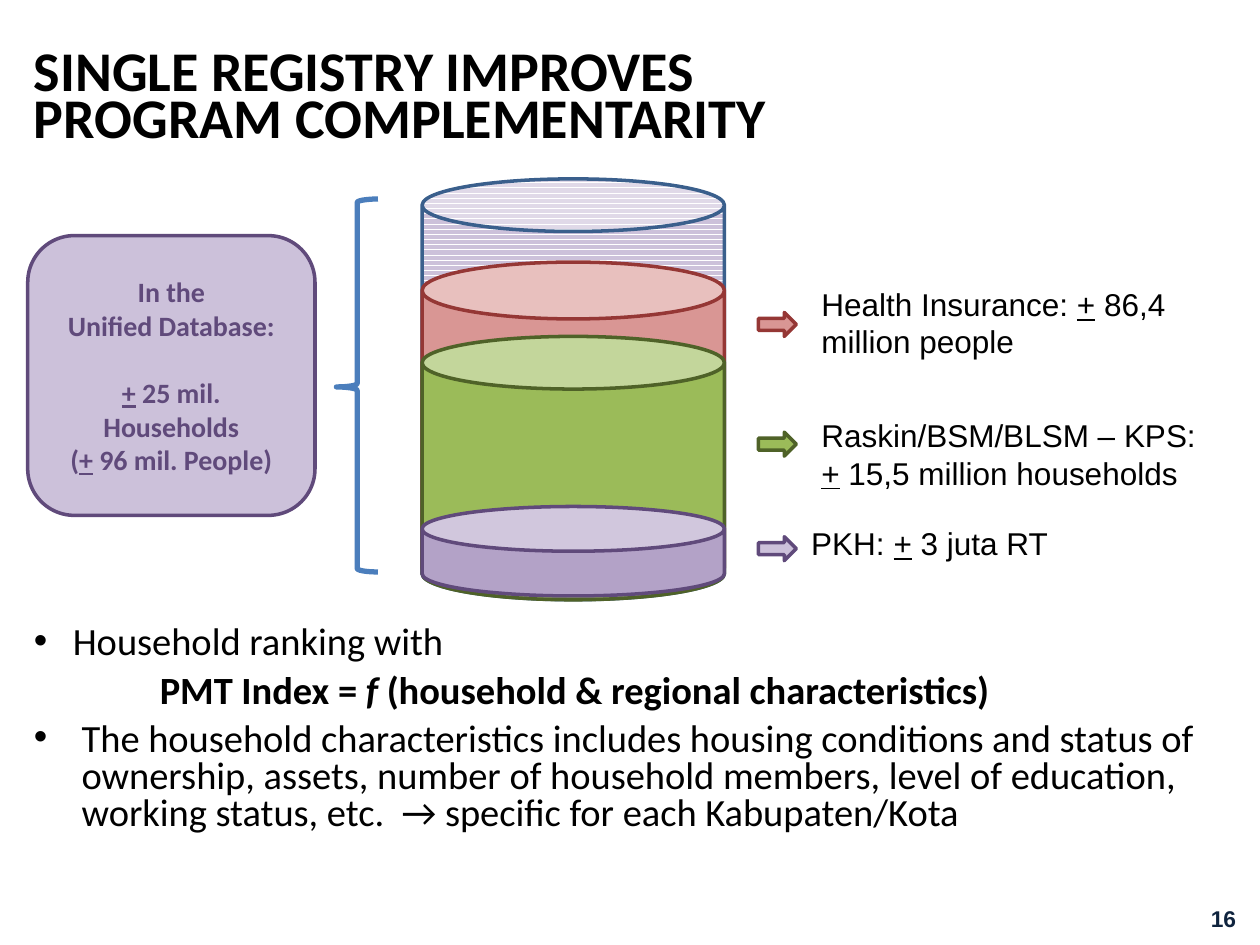
from lxml import etree
from pptx import Presentation
from pptx.dml.color import RGBColor
from pptx.enum.dml import MSO_PATTERN
from pptx.enum.shapes import MSO_SHAPE as SHAPE
from pptx.enum.text import MSO_ANCHOR as ANCHOR, PP_ALIGN as ALIGN
from pptx.oxml.ns import qn
from pptx.util import Inches, Pt

BLACK = RGBColor(0x00, 0x00, 0x00)
WHITE = RGBColor(0xFF, 0xFF, 0xFF)
NAVY = RGBColor(0x0F, 0x24, 0x3E)
STEEL = RGBColor(0x3A, 0x5F, 0x8C)
BLUE = RGBColor(0x4B, 0x7E, 0xBC)
ROSE = RGBColor(0xD9, 0x96, 0x94)
DARK_RED = RGBColor(0x95, 0x37, 0x35)
GREEN = RGBColor(0x9B, 0xBB, 0x59)
DARK_GREEN = RGBColor(0x4F, 0x62, 0x28)
LILAC = RGBColor(0xCC, 0xC1, 0xDA)
VIOLET = RGBColor(0xB3, 0xA2, 0xC7)
PURPLE = RGBColor(0x60, 0x4A, 0x7B)


def add_text(para, text, font="Calibri", size=16, color=BLACK, bold=False,
             italic=False, underline=False):
    span = para.add_run()
    span.text = text
    span.font.name = font
    span.font.size = Pt(size)
    span.font.color.rgb = color
    span.font.bold = bold
    span.font.italic = italic
    span.font.underline = underline


def draw_shape(kind, left, top, width, height, fill=None, line=None, weight=2):
    shape = page.shapes.add_shape(kind, Inches(left), Inches(top), Inches(width), Inches(height))
    shape.shadow.inherit = False
    if fill is None:
        shape.fill.background()
    else:
        shape.fill.solid()
        shape.fill.fore_color.rgb = fill
    if line is None:
        shape.line.fill.background()
    else:
        shape.line.color.rgb = line
        shape.line.width = Pt(weight)
    return shape


deck = Presentation()
deck.slide_width = Inches(10)
deck.slide_height = Inches(7.5)
page = deck.slides.add_slide(deck.slide_layouts[6])

cans = [
    (1.42, 3.34, 0.174, LILAC, STEEL),
    (2.08, 2.65, 0.188, ROSE, DARK_RED),
    (2.67, 2.09, 0.2, GREEN, DARK_GREEN),
    (4.02, 0.71, 0.5, VIOLET, PURPLE),
]
for top, height, curve, fill, line in cans:
    can = draw_shape(SHAPE.CAN, 3.35, top, 2.4, height, fill, line)
    can.adjustments[0] = curve
    if line == STEEL:
        can.fill.patterned()
        can.fill.pattern = MSO_PATTERN.DARK_HORIZONTAL
        can.fill.fore_color.rgb = LILAC
        can.fill.back_color.rgb = WHITE

title = page.shapes.add_textbox(Inches(0.17), Inches(0.38), Inches(9.83), Inches(0.87))
title.text_frame.word_wrap = True
title.text_frame.vertical_anchor = ANCHOR.MIDDLE
para = title.text_frame.paragraphs[0]
para.line_spacing = Pt(27)
add_text(para, "SINGLE REGISTRY IMPROVES", size=32, bold=True)
para.add_line_break()
add_text(para, "PROGRAM COMPLEMENTARITY", size=32, bold=True)

brace = draw_shape(SHAPE.LEFT_BRACE, 2.67, 1.58, 0.33, 2.96, line=BLUE, weight=3)
brace.adjustments[0] = 0.083
brace.adjustments[1] = 0.504

database = draw_shape(SHAPE.ROUNDED_RECTANGLE, 0.22, 1.87, 2.28, 2.22, LILAC, PURPLE)
frame = database.text_frame
frame.word_wrap = True
frame.vertical_anchor = ANCHOR.MIDDLE
database_lines = [
    ["In the"],
    ["Unified Database:"],
    ["+", " 25 mil. Households"],
    ["(", "+", " 96 mil. People)"],
]
for index, parts in enumerate(database_lines):
    para = frame.paragraphs[0] if index == 0 else frame.add_paragraph()
    para.alignment = ALIGN.CENTER
    if index == 2:
        para.space_before = Pt(19.5)
    for text in parts:
        add_text(para, text, color=PURPLE, bold=True, underline=text == "+")

programs = [
    (2.48, ROSE, DARK_RED, (6.42, 2.21, 3.39, 0.71), True,
     [["Health Insurance: ", "+", " 86,4 million people"]]),
    (3.43, GREEN, DARK_GREEN, (6.42, 3.25, 3.39, 0.71), True,
     [["Raskin/BSM/BLSM – KPS:"], ["+", " 15,5 million households"]]),
    (4.26, LILAC, PURPLE, (6.34, 4.11, 2.1, 0.4), False,
     [["PKH: ", "+", " 3 juta RT"]]),
]
for arrow_top, fill, line, bounds, wrap, label_lines in programs:
    draw_shape(SHAPE.RIGHT_ARROW, 6.02, arrow_top, 0.3, 0.19, fill, line)
    label = page.shapes.add_textbox(*[Inches(length) for length in bounds])
    frame = label.text_frame
    frame.word_wrap = wrap
    for index, parts in enumerate(label_lines):
        para = frame.paragraphs[0] if index == 0 else frame.add_paragraph()
        for text in parts:
            add_text(para, text, font="Arial", size=18, underline=text == "+")

notes = page.shapes.add_textbox(Inches(0.17), Inches(4.92), Inches(9.67), Inches(1.82))
frame = notes.text_frame
frame.word_wrap = True
note_lines = [
    (0.31, True, [("Household ranking with", {})]),
    (1, False, [("PMT Index = ", {"bold": True}),
                ("f", {"bold": True, "italic": True}),
                (" (household & regional characteristics)", {"bold": True})]),
    (0.38, True, [("The household characteristics includes housing conditions and status of "
                   "ownership, assets, number of household members, level of education, "
                   "working status, etc.  → specific for each Kabupaten/Kota", {})]),
]
for index, (indent, bulleted, parts) in enumerate(note_lines):
    para = frame.paragraphs[0] if index == 0 else frame.add_paragraph()
    para.line_spacing = 0.8
    if index:
        para.space_before = Pt(6.5)
    properties = para._p.get_or_add_pPr()
    properties.set("marL", str(Inches(indent)))
    if bulleted:
        properties.set("indent", str(-Inches(indent)))
        etree.SubElement(properties, qn("a:buFont")).set("typeface", "Arial")
        etree.SubElement(properties, qn("a:buChar")).set("char", "•")
    for text, style in parts:
        add_text(para, text, size=22, **style)

number = draw_shape(SHAPE.RECTANGLE, 9.42, 7.08, 0.58, 0.42, WHITE)
number.text_frame.vertical_anchor = ANCHOR.MIDDLE
para = number.text_frame.paragraphs[0]
para.alignment = ALIGN.CENTER
add_text(para, "16", font="Arial", size=13, color=NAVY, bold=True)

deck.save("out.pptx")
